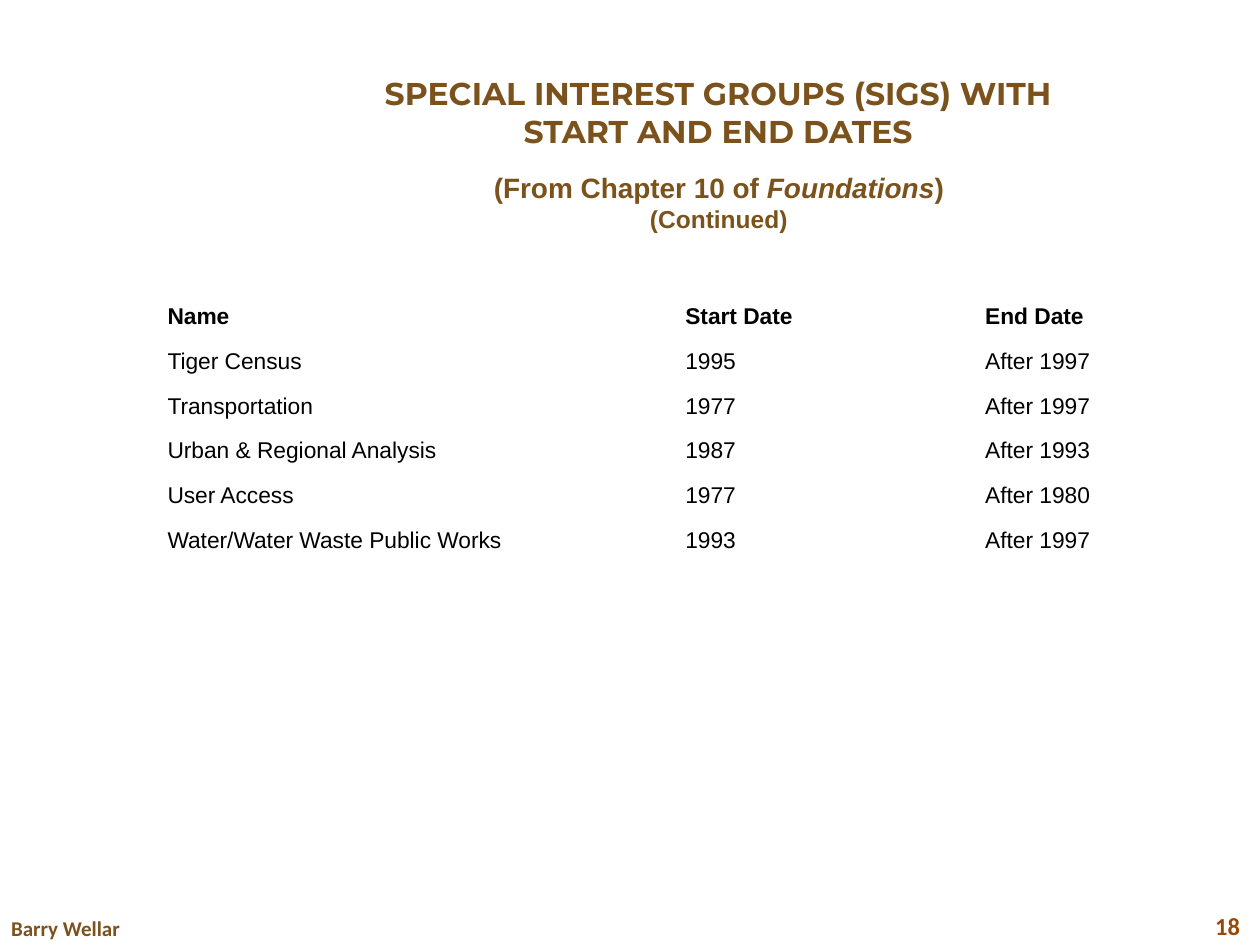
from dataclasses import dataclass

from pptx import Presentation
from pptx.dml.color import RGBColor
from pptx.enum.text import MSO_ANCHOR as Anchor, PP_ALIGN as Align
from pptx.util import Inches, Pt


@dataclass(frozen=True)
class Theme:
    brown: str = "7B521B"
    rust: str = "984807"
    black: str = "000000"
    heading_font: str = "Montserrat"
    body_font: str = "Arial"
    footer_font: str = "Calibri"
    title_size: int = 18
    subtitle_size: int = 16
    continued_size: int = 14
    table_size: int = 13
    author_size: int = 12
    number_size: int = 14


THEME = Theme()

SIG_ROWS = [
    ("Name", "Start Date", "End Date"),
    ("Tiger Census", "1995", "After 1997"),
    ("Transportation", "1977", "After 1997"),
    ("Urban & Regional Analysis", "1987", "After 1993"),
    ("User Access", "1977", "After 1980"),
    ("Water/Water Waste Public Works", "1993", "After 1997"),
]
COLUMN_WIDTHS = (4.11, 2.38, 1.42)


def set_values(target, values):
    for name, value in values.items():
        setattr(target, name, value)


def add_run(paragraph, text, font, size, color, bold=True, italic=False):
    run = paragraph.add_run()
    run.text = text
    set_values(run.font, {"name": font, "size": Pt(size), "bold": bold, "italic": italic})
    run.font.color.rgb = RGBColor.from_string(color)


def add_text_box(slide, box, paragraphs, align, anchor=Anchor.TOP):
    """Each paragraph is a list of runs, given as add_run arguments."""
    shape = slide.shapes.add_textbox(*map(Inches, box))
    frame = shape.text_frame
    set_values(frame, {"word_wrap": True, "vertical_anchor": anchor})
    for index, runs in enumerate(paragraphs):
        paragraph = frame.add_paragraph() if index else frame.paragraphs[0]
        paragraph.alignment = align
        for run in runs:
            add_run(paragraph, *run)


def add_sig_table(slide, box):
    table = slide.shapes.add_table(len(SIG_ROWS), len(COLUMN_WIDTHS), *map(Inches, box)).table
    set_values(table, {"first_row": False, "horz_banding": False})
    for column, width in zip(table.columns, COLUMN_WIDTHS):
        column.width = Inches(width)
    margins = {"margin_left": Inches(0.07), "margin_right": Inches(0.07),
               "margin_top": 0, "margin_bottom": 0}
    for row_index, values in enumerate(SIG_ROWS):
        for column_index, value in enumerate(values):
            cell = table.cell(row_index, column_index)
            cell.fill.background()
            set_values(cell, margins)
            paragraph = cell.text_frame.paragraphs[0]
            set_values(paragraph, {"line_spacing": 1.15, "space_after": Pt(10)})
            add_run(paragraph, value, THEME.body_font, THEME.table_size, THEME.black,
                    bold=row_index == 0)


def add_headings(slide):
    title = ("SPECIAL INTEREST GROUPS (SIGS) WITH START AND END DATES",
             THEME.heading_font, THEME.title_size, THEME.brown)
    add_text_box(slide, (2.6, 0.54, 6.2, 0.61), [[title]], Align.CENTER)

    subtitle = (THEME.body_font, THEME.subtitle_size, THEME.brown)
    source = [("(From Chapter 10 of ", *subtitle),
              ("Foundations", *subtitle, True, True),
              (")", *subtitle)]
    continued = [("(Continued)", THEME.body_font, THEME.continued_size, THEME.brown)]
    add_text_box(slide, (2.6, 1.3, 6.21, 0.61), [source, continued], Align.CENTER, Anchor.MIDDLE)


def add_footer(slide):
    author = ("Barry Wellar", THEME.footer_font, THEME.author_size, THEME.brown)
    add_text_box(slide, (-0.01, 7.22, 1.53, 0.3), [[author]], Align.LEFT)
    number = ("18", THEME.footer_font, THEME.number_size, THEME.rust)
    add_text_box(slide, (7.61, 7.15, 2.33, 0.4), [[number]], Align.RIGHT, Anchor.MIDDLE)


def main():
    presentation = Presentation()
    set_values(presentation, {"slide_width": Inches(10), "slide_height": Inches(7.5)})
    slide = presentation.slides.add_slide(presentation.slide_layouts[6])
    add_headings(slide)
    add_sig_table(slide, (1.26, 2.38, sum(COLUMN_WIDTHS), 2.14))
    add_footer(slide)
    presentation.save("out.pptx")


if __name__ == "__main__":
    main()
